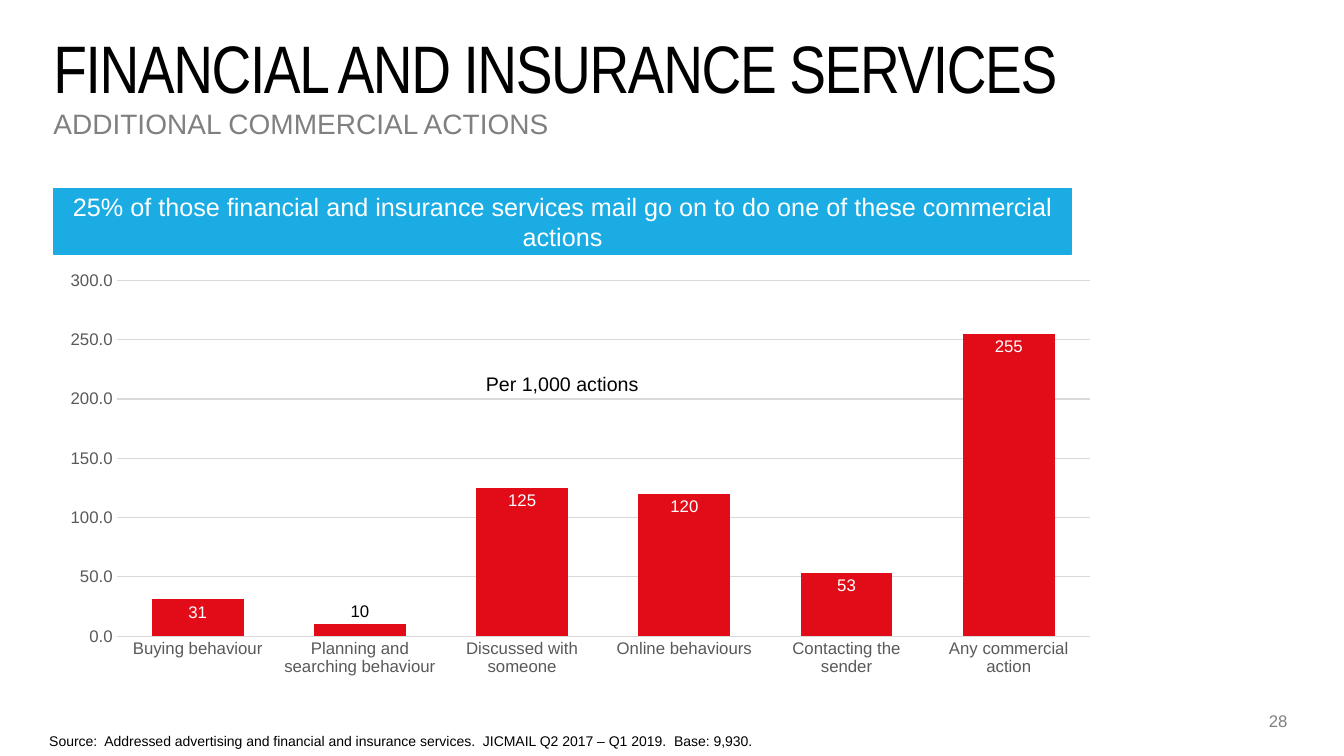
"""Build the financial and insurance services slide with its column chart."""
import pptx
import pptx.chart.data
import pptx.dml.color
import pptx.enum.chart
import pptx.enum.shapes
import pptx.enum.text
import pptx.util

Inches, Pt = pptx.util.Inches, pptx.util.Pt
Align, Anchor = pptx.enum.text.PP_ALIGN, pptx.enum.text.MSO_ANCHOR
Place, Tick = pptx.enum.chart.XL_LABEL_POSITION, pptx.enum.chart.XL_TICK_MARK


class Theme:
    """Colours, fonts and type sizes."""
    black, white, grey = "000000", "FFFFFF", "808080"
    red, blue, axis, grid = "E20C18", "1BACE4", "595959", "D9D9D9"
    face, narrow = "Arial", "Arial Narrow"
    title, sub, lead, note, label, small = 48, 20, 18, 14, 12, 10


def style(font, size, color, face=Theme.face):
    """Set the size, colour and typeface of a font."""
    font.size, font.name, font.bold = Pt(size), face, False
    font.color.rgb = pptx.dml.color.RGBColor.from_string(color)


def write(text, box=None, shape=None, size=Theme.label, color=Theme.black,
          face=Theme.face, align=Align.LEFT, anchor=Anchor.TOP,
          inset=True, wrap=True, line=None, track=None):
    """Place text in a given shape or in a new text box."""
    area = [Inches(n) for n in box]
    if shape is None:
        shape = slide.shapes.add_textbox(*area)
    shape.left, shape.top, shape.width, shape.height = area
    frame = shape.text_frame
    frame.text = text
    frame.word_wrap, frame.vertical_anchor = wrap, anchor
    frame.auto_size = pptx.enum.text.MSO_AUTO_SIZE.NONE
    if not inset:
        frame.margin_left = frame.margin_right = 0
        frame.margin_top = frame.margin_bottom = 0
    para = frame.paragraphs[0]
    para.alignment, para.space_before = align, Pt(0)
    if line:
        para.line_spacing = line
    run = para.runs[0]
    style(run.font, size, color, face)
    if track:
        run.font._element.set("spc", str(track * 100))


rgb = pptx.dml.color.RGBColor.from_string
deck = pptx.Presentation()
deck.slide_width, deck.slide_height = Inches(13.33), Inches(7.5)
slide = deck.slides.add_slide(deck.slide_layouts[5])

data = pptx.chart.data.CategoryChartData(number_format="0")
data.categories = ["Buying behaviour", "Planning and searching behaviour",
                   "Discussed with someone", "Online behaviours",
                   "Contacting the sender", "Any commercial action"]
data.add_series("Series 1", [31, 10, 125, 120, 53, 255])
chart = slide.shapes.add_chart(
    pptx.enum.chart.XL_CHART_TYPE.COLUMN_CLUSTERED,
    Inches(0.49), Inches(2.61), Inches(10.53), Inches(4.18), data).chart
chart.has_legend = chart.has_title = False
style(chart.font, Theme.small, Theme.black)

for axis in (chart.category_axis, chart.value_axis):
    axis.major_tick_mark = axis.minor_tick_mark = Tick.NONE
    style(axis.tick_labels.font, Theme.label, Theme.axis)
value = chart.value_axis
value.minimum_scale, value.maximum_scale, value.major_unit = 0, 300, 50
value.tick_labels.number_format = "0.0"
value.tick_labels.number_format_is_linked = False
value.format.line.fill.background()
for rule in (value.major_gridlines.format.line, chart.category_axis.format.line):
    rule.color.rgb, rule.width = rgb(Theme.grid), Pt(0.75)

plot = chart.plots[0]
plot.gap_width, plot.overlap, plot.vary_by_categories = 77, -27, False
bars = plot.series[0]
bars.format.fill.solid()
bars.format.fill.fore_color.rgb = rgb(Theme.red)
labels = bars.data_labels
labels.show_value, labels.position = True, Place.INSIDE_END
labels.number_format, labels.number_format_is_linked = "0", False
style(labels.font, Theme.label, Theme.white)
low = bars.points[1].data_label
style(low.font, Theme.label, Theme.black)
low.position = Place.OUTSIDE_END

write("FINANCIAL AND INSURANCE SERVICES", box=(0.53, 0.45, 12.2, 0.52),
      shape=slide.shapes.title, size=Theme.title, face=Theme.narrow,
      inset=False, line=Pt(44), track=-1)
write("ADDITIONAL COMMERCIAL ACTIONS", box=(0.53, 1.09, 12.23, 0.29),
      size=Theme.sub, color=Theme.grey, inset=False, line=0.9)
write("28", box=(12.3, 7.05, 0.47, 0.2), color=Theme.grey,
      align=Align.RIGHT, inset=False)
write("Source:  Addressed advertising and financial and insurance services.  "
      "JICMAIL Q2 2017 – Q1 2019.  Base: 9,930.",
      box=(0.39, 7.22, 7.27, 0.27), size=Theme.small, wrap=False)

area = (0.53, 1.87, 10.1, 0.65)
banner = slide.shapes.add_shape(pptx.enum.shapes.MSO_SHAPE.RECTANGLE,
                                *[Inches(n) for n in area])
banner.shadow.inherit = False
banner.fill.solid()
banner.fill.fore_color.rgb = banner.line.color.rgb = rgb(Theme.blue)
banner.line.width = Pt(1)
write("25% of those financial and insurance services mail go on to do one of "
      "these commercial actions", box=area, shape=banner, size=Theme.lead,
      color=Theme.white, align=Align.CENTER, anchor=Anchor.MIDDLE)
write("Per 1,000 actions", box=(4.72, 3.64, 1.73, 0.34), size=Theme.note,
      wrap=False)

deck.save("out.pptx")
